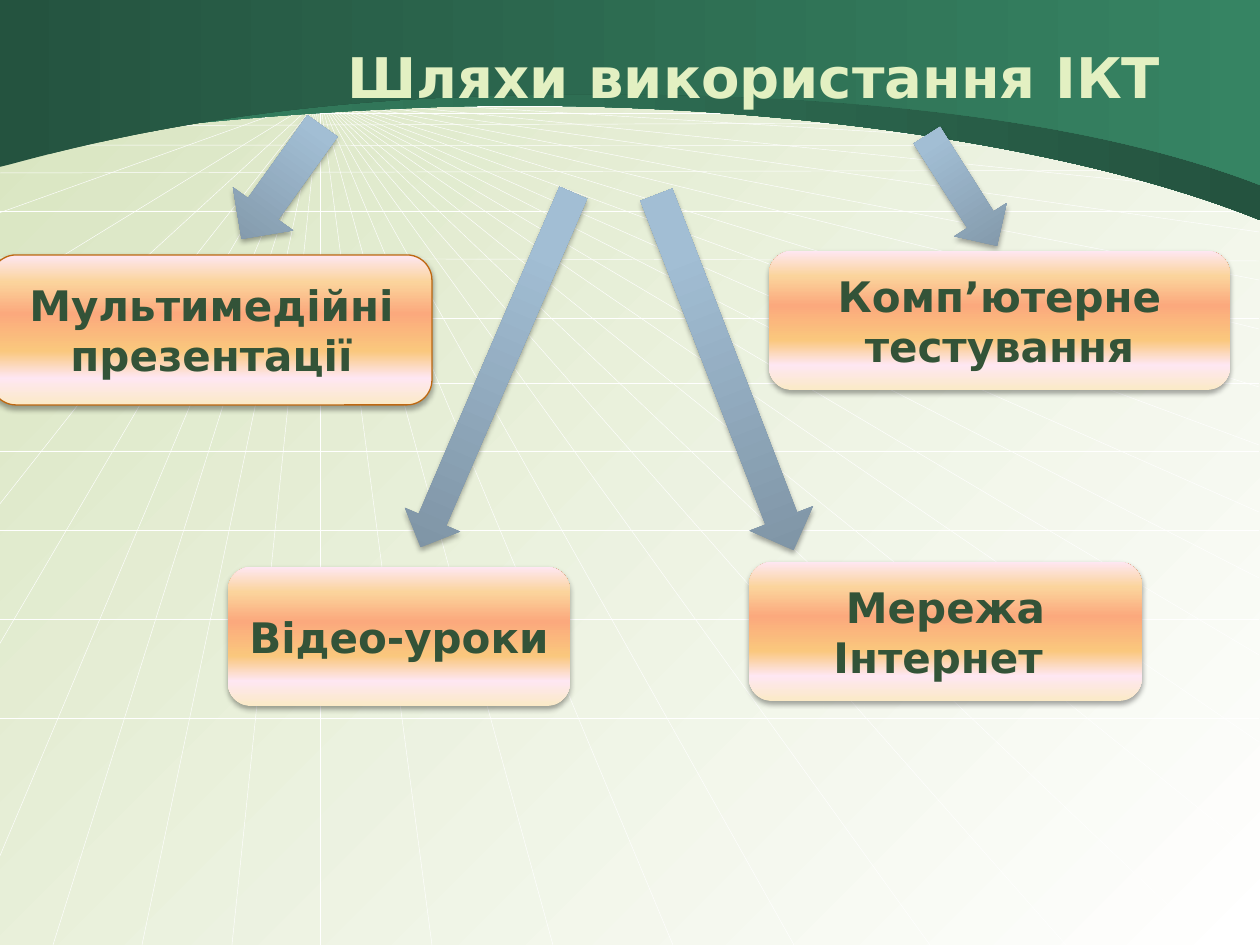
"""Builds the slide on ways of using ICT: a title, four topic boxes and their arrows."""
from lxml.etree import SubElement
from pptx import Presentation
from pptx.dml.color import RGBColor
from pptx.enum.shapes import MSO_CONNECTOR, MSO_SHAPE
from pptx.enum.text import MSO_ANCHOR, MSO_AUTO_SIZE, PP_ALIGN
from pptx.oxml.ns import qn
from pptx.util import Pt

rgb = RGBColor.from_string


def px(length):
    return round(length * 914400 / 126)


def paint(owner, fill, stops, angle):
    fill.gradient()
    fill.gradient_angle = angle
    stop_list = owner.find(".//" + qn("a:gsLst"))
    for old_stop in list(stop_list):
        stop_list.remove(old_stop)
    for position, colour in stops:
        stop = SubElement(stop_list, qn("a:gs"), pos=str(position * 1000))
        SubElement(stop, qn("a:srgbClr"), val=colour)


FONT = "DejaVu Sans"
ARROW_BLUE = [(0, "7D92A3"), (80, "A2BED4"), (100, "A2BFD6")]
BOX_PEACH = [(0, "FBEAC7"), (18, "FEE7F2"), (36, "FAC77D"),
             (61, "FBA97D"), (82, "FBD49C"), (100, "FEE7F2")]
DARK, LIGHT = "24533F", "368463"

prs = Presentation()
prs.slide_width, prs.slide_height = px(1260), px(945)
slide = prs.slides.add_slide(prs.slide_layouts[6])
shapes = slide.shapes
paint(slide._element, slide.background.fill, [(0, "D7E4BE"), (100, "FFFFFF")], 315)

bottom_xs = [53, 142, 232, 320, 432, 553, 673, 794, 930, 1066, 1210]
right_ys = [126, 155, 194, 232, 280, 329, 387, 445, 512, 578, 655, 742, 857]
left_ys = [98, 122, 146, 146, 213, 295, 392, 505, 645, 858]
level_ys = [(106, 106), (113, 113), (126, 122), (145, 146), (173, 170), (211, 211), (258, 261),
            (318, 318), (383, 383), (451, 451), (530, 530), (619, 619), (718, 718)]
ray_ends = ([(x, 945) for x in bottom_xs] + [(1259, y) for y in right_ys]
            + [(-1, y) for y in left_ys])
grid = [(320, 98, x, y) for x, y in ray_ends] + [(-1, y1, 1259, y2) for y1, y2 in level_ys]
for ends in grid:
    ray = shapes.add_connector(MSO_CONNECTOR.STRAIGHT, *map(px, ends))
    ray.line.color.rgb = rgb("FFFFFF")
    ray.line.width = Pt(0.25)
    SubElement(ray._element.spPr, qn("a:effectLst"))

bands = [
    ([(-1, 149), (14, 148), (168, 117), (437, 107), (707, 98), (1047, 134), (1260, 220)],
     LIGHT, DARK),
    ([(-1, 167), (14, 165), (190, 107), (459, 97), (727, 87), (1047, 102), (1260, 185)],
     DARK, LIGHT),
]
for edge, left_colour, right_colour in bands:
    outline = shapes.build_freeform(px(-1), 0)
    outline.add_line_segments([(px(x), px(y)) for x, y in edge + [(1260, 0)]])
    band = outline.convert_to_shape()
    band_outline = band._element.find(".//" + qn("a:path"))
    segments = band_outline.findall(qn("a:lnTo"))
    for first in (1, 4):
        curve = band_outline.makeelement(qn("a:cubicBezTo"))
        segments[first].addprevious(curve)
        for segment in segments[first:first + 3]:
            curve.append(segment[0])
            band_outline.remove(segment)
    paint(band._element, band.fill, [(0, left_colour), (100, right_colour)], 0)
    band.line.fill.background()
    band.shadow.inherit = False

topics = [
    ("Відео-уроки ", (228, 567, 342, 139), (467, 177, 60, 386), 23.3),
    ("Мультимедійні презентації", (-9, 255, 441, 150), (245, 113, 74, 139), 35.6),
    ("Мережа Інтернет ", (749, 562, 393, 139), (691, 182, 68, 381), 338.9),
    ("Комп’ютерне тестування", (769, 251, 461, 139), (931, 125, 62, 131), 327.6),
]
for topic, box_place, arrow_place, turn in topics:
    arrow = shapes.add_shape(MSO_SHAPE.DOWN_ARROW, *map(px, arrow_place))
    arrow.rotation = turn
    box = shapes.add_shape(MSO_SHAPE.ROUNDED_RECTANGLE, *map(px, box_place))
    for part, stops in ((arrow, ARROW_BLUE), (box, BOX_PEACH)):
        paint(part._element, part.fill, stops, 90)
        part.line.fill.background()
        part.shadow.inherit = False
        effects = part._element.spPr.find(qn("a:effectLst"))
        shadow = SubElement(effects, qn("a:outerShdw"), blurRad="40000", dist="23000",
                            dir="5400000", rotWithShape="0")
        shade = SubElement(shadow, qn("a:srgbClr"), val="000000")
        SubElement(shade, qn("a:alpha"), val="35000")
    if topic.startswith("Мульти"):
        box.line.color.rgb = rgb("BE6811")
        box.line.width = Pt(0.75)
    label = box.text_frame
    label.word_wrap = True
    label.vertical_anchor = MSO_ANCHOR.MIDDLE
    label.text = topic
    wording = label.paragraphs[0]
    wording.alignment = PP_ALIGN.CENTER
    wording.font.name, wording.font.size, wording.font.bold = FONT, Pt(24), True
    wording.font.color.rgb = rgb("335338")

title = shapes.add_textbox(px(335), px(36), px(925), px(81)).text_frame
title.word_wrap = True
title.auto_size = MSO_AUTO_SIZE.SHAPE_TO_FIT_TEXT
title.text = "Шляхи використання ІКТ"
heading = title.paragraphs[0]
heading.font.name, heading.font.size, heading.font.bold = FONT, Pt(32), True
heading.font.color.rgb = rgb("E3F0C2")

prs.save("out.pptx")
